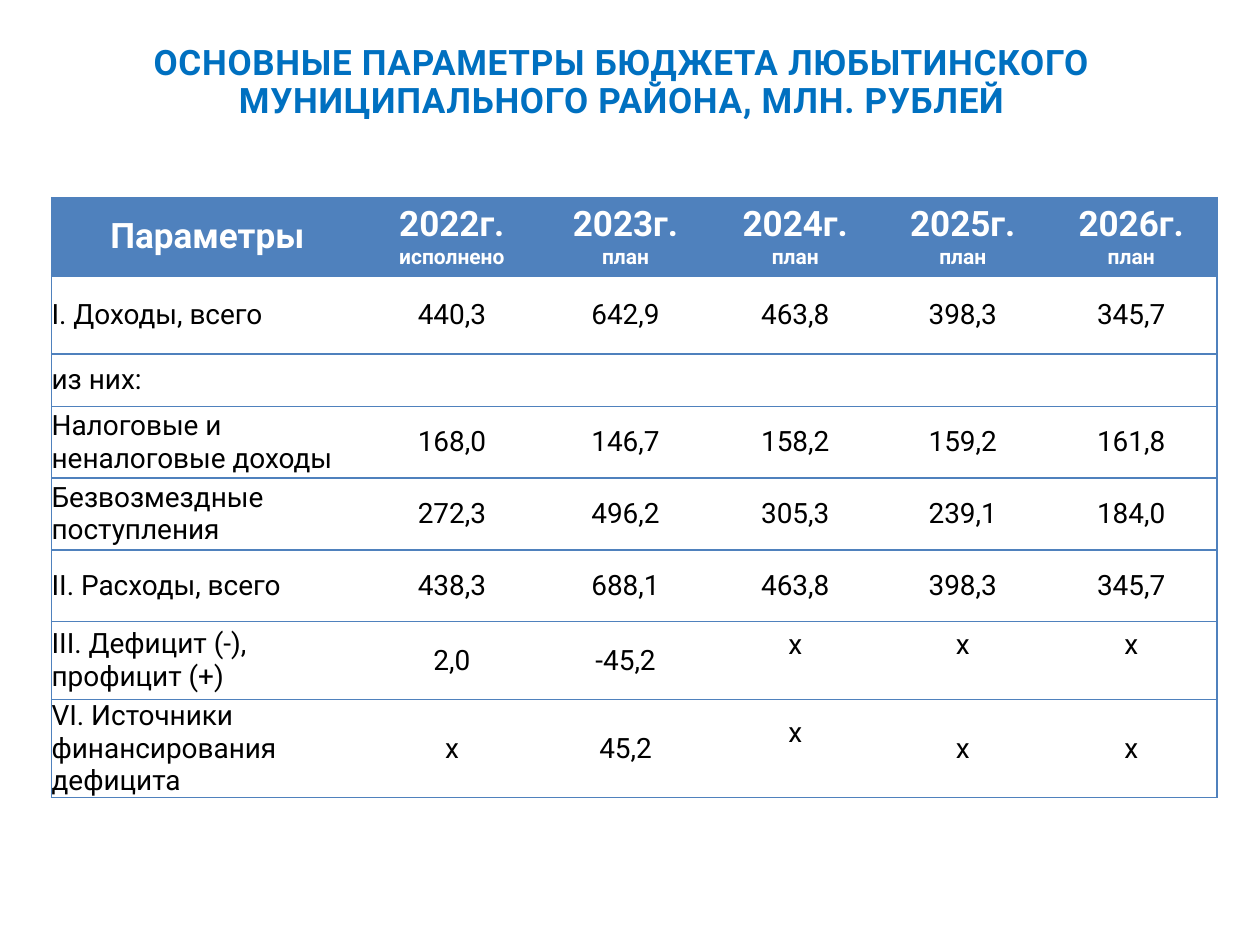
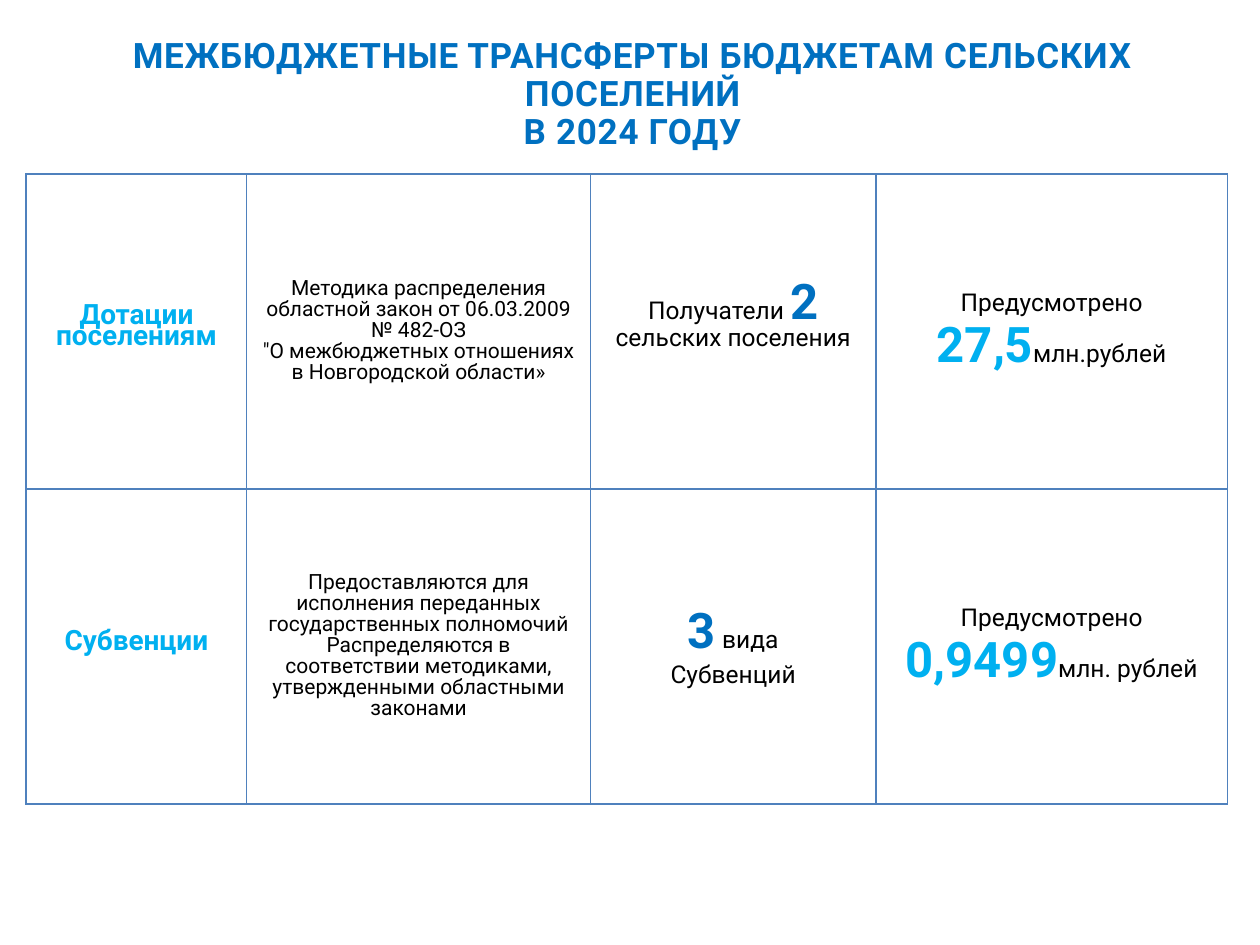
import pptx
import pptx.dml.color
import pptx.enum.text
import pptx.oxml
import pptx.oxml.ns
import pptx.util

Pt = pptx.util.Pt
CENTER = pptx.enum.text.PP_ALIGN.CENTER
LEFT = pptx.enum.text.PP_ALIGN.LEFT
FONT = "Roboto"
COLORS = {
    "title": "0070C0",
    "accent": "00B0F0",
    "table": "4F81BD",
    "text": "000000",
    "white": "FFFFFF",
}
# Text styles: size, bold, colour
STYLES = {
    "title": (20, True, "title"),
    "heading": (20, True, "white"),
    "subheading": (12, True, "white"),
    "value": (16, False, "text"),
    "transfer": (16, True, "accent"),
    "rule": (12, False, "text"),
    "note": (14, False, "text"),
    "count": (28, True, "title"),
    "amount": (28, True, "accent"),
}
NO_TABLE_STYLE = "{2D5ABB26-0587-4C30-8999-92F81FD0307C}"


def write_text(text_frame, paragraphs, alignment=CENTER, line_spacing=None):
    """Write paragraphs, each a list of (text, style) runs."""
    for index, runs in enumerate(paragraphs):
        paragraph = text_frame.paragraphs[0] if index == 0 else text_frame.add_paragraph()
        paragraph.alignment = alignment
        paragraph.line_spacing = line_spacing
        for text, style in runs:
            size, bold, color = STYLES[style]
            run = paragraph.add_run()
            run.text = text
            for name, value in {"name": FONT, "size": Pt(size), "bold": bold}.items():
                setattr(run.font, name, value)
            run.font.color.rgb = pptx.dml.color.RGBColor.from_string(COLORS[color])
            if style == "title":
                run.font._element.set("spc", "40")


def format_cell(cell, sides, fill, margins):
    """Draw borders on the sides (L, R, T, B), then set fill and margins."""
    properties = cell._tc.get_or_add_tcPr()
    for side in sides:
        properties.append(pptx.oxml.parse_xml(
            f'<a:ln{side} {pptx.oxml.ns.nsdecls("a")} w="12700"><a:solidFill>'
            f'<a:srgbClr val="{COLORS["table"]}"/></a:solidFill></a:ln{side}>'))
    if fill:
        cell.fill.solid()
        cell.fill.fore_color.rgb = pptx.dml.color.RGBColor.from_string(COLORS[fill])
    else:
        cell.fill.background()
    cell.vertical_anchor = pptx.enum.text.MSO_ANCHOR.MIDDLE
    for name, margin in zip(("left", "top", "right", "bottom"), margins):
        setattr(cell, f"margin_{name}", Pt(margin))


presentation = pptx.Presentation()
presentation.slide_width, presentation.slide_height = Pt(720), Pt(540)

# Title and table frame of each slide
pages = [
    {
        "title": ["ОСНОВНЫЕ ПАРАМЕТРЫ БЮДЖЕТА ЛЮБЫТИНСКОГО МУНИЦИПАЛЬНОГО РАЙОНА, МЛН. РУБЛЕЙ"],
        "title_box": (10, 22.5, 690.5, 21),
        "table_corner": (29.5, 113),
        "columns": [178, 101.5, 97, 97, 94.5, 98],
        "rows": [41, 44.5, 30, 41, 41, 41, 44.5, 56],
    },
    {
        "title": ["МЕЖБЮДЖЕТНЫЕ ТРАНСФЕРТЫ БЮДЖЕТАМ СЕЛЬСКИХ ПОСЕЛЕНИЙ", "В 2024 ГОДУ"],
        "title_box": (19.5, 18.5, 684, 21),
        "table_corner": (15, 99.5),
        "columns": [126, 196.5, 163, 201],
        "rows": [180, 180],
    },
]
tables = []
for page in pages:
    slide = presentation.slides.add_slide(presentation.slide_layouts[5])
    title = slide.shapes.title
    for name, length in zip(("left", "top", "width", "height"), page["title_box"]):
        setattr(title, name, Pt(length))
    title_format = {
        "word_wrap": True,
        "auto_size": pptx.enum.text.MSO_AUTO_SIZE.NONE,
        "vertical_anchor": pptx.enum.text.MSO_ANCHOR.TOP,
    }
    for name, value in title_format.items():
        setattr(title.text_frame, name, value)
    write_text(title.text_frame, [[(line, "title")] for line in page["title"]], line_spacing=0.9)

    columns, rows = page["columns"], page["rows"]
    left, top = page["table_corner"]
    table = slide.shapes.add_table(
        len(rows), len(columns), Pt(left), Pt(top), Pt(sum(columns)), Pt(sum(rows))).table
    table.first_row = table.horz_banding = False
    table._tbl.tblPr.find(pptx.oxml.ns.qn("a:tableStyleId")).text = NO_TABLE_STYLE
    for column, width in zip(table.columns, columns):
        column.width = Pt(width)
    for row, height in zip(table.rows, rows):
        row.height = Pt(height)
    tables.append(table)

budget_table, transfer_table = tables

# Budget table: header
headings = [[[("Параметры", "heading")]]]
for year in range(2022, 2027):
    status = "исполнено" if year == 2022 else "план"
    headings.append([[(f"{year}г.", "heading")], [(status, "subheading")]])
for column, heading in enumerate(headings):
    write_text(budget_table.cell(0, column).text_frame, heading)

# Budget table: values
budget_rows = [
    ("I. Доходы, всего", "440,3", "642,9", "463,8", "398,3", "345,7"),
    ("из них:", "", "", "", "", ""),
    ("Налоговые и неналоговые доходы", "168,0", "146,7", "158,2", "159,2", "161,8"),
    ("Безвозмездные поступления", "272,3", "496,2", "305,3", "239,1", "184,0"),
    ("II. Расходы, всего", "438,3", "688,1", "463,8", "398,3", "345,7"),
    ("III. Дефицит (-), профицит (+)", "2,0", "-45,2", "х", "х", "х"),
    ("VI. Источники финансирования дефицита", "х", "45,2", "х", "х", "х"),
]
for row, values in enumerate(budget_rows, start=1):
    for column, value in enumerate(values):
        if value:
            write_text(budget_table.cell(row, column).text_frame, [[(value, "value")]],
                       LEFT if column == 0 else CENTER)

# Budget table: outer frame, row lines and fills
raised_cells = {(6, 3), (6, 4), (6, 5), (7, 3)}
last_column = len(budget_table.columns) - 1
for row in range(len(budget_table.rows)):
    for column in range(last_column + 1):
        sides = {0: "LTB", last_column: "RTB"}.get(column, "TB")
        fill = "white" if row else "table"
        margins = (0, 0, 0, 18 if (row, column) in raised_cells else 0)
        if row == 0:
            margins = (7.2, 3.6, 7.2, 3.6)
        format_cell(budget_table.cell(row, column), sides, fill, margins)

# Transfer table: paragraphs and line spacing of each cell
tight = Pt(12)
transfer_rows = [
    [
        ([[("Дотации поселениям", "transfer")]], tight),
        ([[("Методика распределения областной закон от 06.03.2009 № 482-ОЗ", "rule")],
          [("\"О межбюджетных отношениях в Новгородской области»", "rule")]], tight),
        ([[("Получатели ", "note"), ("2 ", "count"), ("сельских поселения", "note")]], tight),
        ([[("Предусмотрено", "note")], [("27,5", "amount"), ("млн.рублей", "note")]], None),
    ],
    [
        ([[("Субвенции", "transfer")]], tight),
        ([[("Предоставляются для исполнения переданных государственных полномочий", "rule")],
          [("Распределяются в соответствии методиками, утвержденными областными законами",
            "rule")]], tight),
        ([[("3", "count"), (" вида", "note")], [("Субвенций", "note")]], None),
        ([[("Предусмотрено", "note")], [("0,9499", "amount"), ("млн. рублей", "note")]], None),
    ],
]
for row, cells in enumerate(transfer_rows):
    for column, (paragraphs, line_spacing) in enumerate(cells):
        cell = transfer_table.cell(row, column)
        write_text(cell.text_frame, paragraphs, line_spacing=line_spacing)
        format_cell(cell, "LRTB", None, (6.5, 6.5, 6.5, 6.5))

presentation.save("out.pptx")
